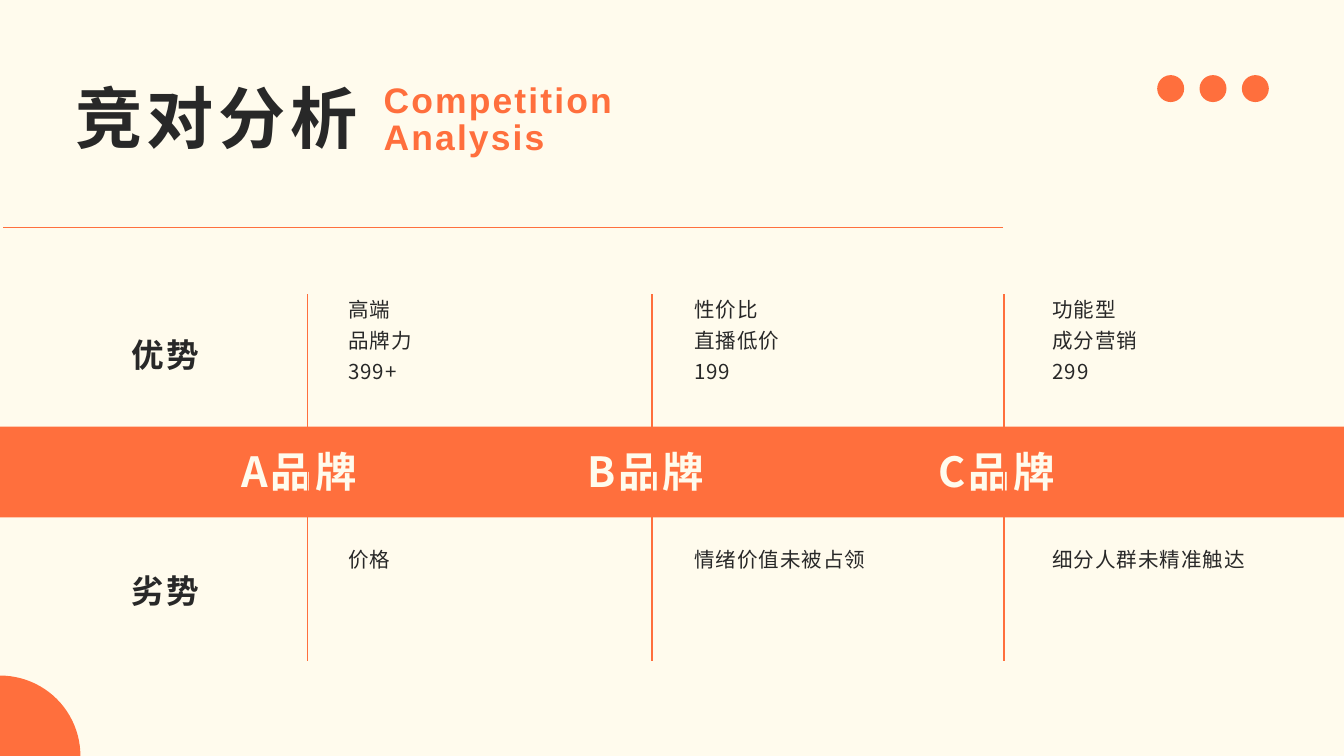
from dataclasses import dataclass

from lxml import etree
from pptx import Presentation
from pptx.dml.color import RGBColor
from pptx.enum.shapes import MSO_CONNECTOR, MSO_SHAPE
from pptx.enum.text import MSO_ANCHOR, MSO_AUTO_SIZE, PP_ALIGN
from pptx.oxml.ns import qn
from pptx.util import Cm, Pt

LEFT, CENTER = PP_ALIGN.LEFT, PP_ALIGN.CENTER
TOP = MSO_ANCHOR.TOP
GROW = MSO_AUTO_SIZE.SHAPE_TO_FIT_TEXT
RECT, OVAL = MSO_SHAPE.RECTANGLE, MSO_SHAPE.OVAL
STRAIGHT = MSO_CONNECTOR.STRAIGHT


@dataclass(frozen=True)
class Type:
    size: float
    lead: float
    track: float
    color: RGBColor
    bold: bool = True
    font: str = "Noto Sans CJK SC"


class Theme:
    cream = RGBColor.from_string("FFFBED")
    orange = RGBColor.from_string("FF6F3D")
    ink = RGBColor.from_string("282828")
    title = Type(72, 85, 4.8, ink)
    sub = Type(38, 39.9, 2.3, orange, font="Arial")
    label = Type(35, 41.3, 2.3, ink)
    brand = Type(44.5, 52.8, 3, cream)
    body = Type(22, 33, 1.1, ink, bold=False)
    line = Pt(1.5)


class Deck:
    def __init__(self, theme):
        self.theme = theme
        self.prs = Presentation()
        self.prs.slide_width, self.prs.slide_height = Cm(50.8), Cm(28.58)
        self.slide = self.prs.slides.add_slide(self.prs.slide_layouts[5])
        fill = self.slide.background.fill
        fill.solid()
        fill.fore_color.rgb = theme.cream

    def set_text(self, shape, text, style, align):
        """Fill a text shape and format each of its runs."""
        frame = shape.text_frame
        frame.text = text
        frame.word_wrap = True
        frame.auto_size = GROW
        frame.vertical_anchor = TOP
        frame.margin_left = frame.margin_right = 0
        frame.margin_top = frame.margin_bottom = 0
        for para in frame.paragraphs:
            para.alignment = align
            para.line_spacing = Pt(style.lead)
            para.space_before = Pt(0)
            for run in para.runs:
                font = run.font
                font.size, font.bold = Pt(style.size), style.bold
                font.name = style.font
                font.color.rgb = style.color
                props = run._r.get_or_add_rPr()
                props.set("spc", str(round(style.track * 100)))
                east = etree.SubElement(props, qn("a:ea"))
                east.set("typeface", style.font)

    def title(self, text, x, y, w, h):
        shape = self.slide.shapes.title
        shape.left, shape.top, shape.width, shape.height = map(Cm, (x, y, w, h))
        self.set_text(shape, text, self.theme.title, LEFT)

    def text(self, text, x, y, w, h, style, align=LEFT):
        box = self.slide.shapes.add_textbox(Cm(x), Cm(y), Cm(w), Cm(h))
        self.set_text(box, text, style, align)

    def block(self, kind, x, y, w, h):
        shape = self.slide.shapes.add_shape(kind, Cm(x), Cm(y), Cm(w), Cm(h))
        shape.shadow.inherit = False
        shape.fill.solid()
        shape.fill.fore_color.rgb = self.theme.orange
        shape.line.fill.background()

    def rule(self, x1, y1, x2, y2):
        line = self.slide.shapes.add_connector(
            STRAIGHT, Cm(x1), Cm(y1), Cm(x2), Cm(y2))
        line.line.color.rgb = self.theme.orange
        line.line.width = self.theme.line
        etree.SubElement(line._element.spPr, qn("a:effectLst"))


# line x, brand x, text x, brand, strengths, weakness
BRANDS = [
    (11.63, 9.12, 13.16, "A品牌", "高端\n品牌力\n399+", "价格"),
    (24.64, 22.2, 26.24, "B品牌", "性价比\n直播低价\n199", "情绪价值未被占领"),
    (37.95, 35.48, 39.78, "C品牌", "功能型\n成分营销\n299", "细分人群未精准触达"),
]
LABELS = [("优势", 12.67), ("劣势", 21.59)]


def main():
    theme = Theme()
    deck = Deck(theme)
    deck.title("竞对分析", 2.84, 2.92, 13.13, 3)
    deck.text("Competition Analysis", 14.5, 3.15, 10.9, 2.9, theme.sub)
    deck.rule(37.92, 8.59, 0.13, 8.59)

    for name, y in LABELS:
        deck.text(name, 3.05, y, 6.38, 1.45, theme.label, CENTER)

    deck.block(RECT, 0, 16.13, 50.88, 3.43)
    for line_x, brand_x, text_x, brand, pros, cons in BRANDS:
        deck.text(pros, text_x, 11, 10.19, 3.45, theme.body)
        deck.text(cons, text_x, 20.45, 10.19, 1.12, theme.body)
        deck.text(brand, brand_x, 16.89, 8.15, 1.88, theme.brand)
        deck.rule(line_x, 11.13, line_x, 24.99)

    for i in range(3):
        deck.block(OVAL, 43.74 + 1.6 * i, 2.84, 1.02, 1.02)
    deck.block(OVAL, -3.03, 25.54, 6.07, 6.07)
    deck.prs.save("out.pptx")


if __name__ == "__main__":
    main()
